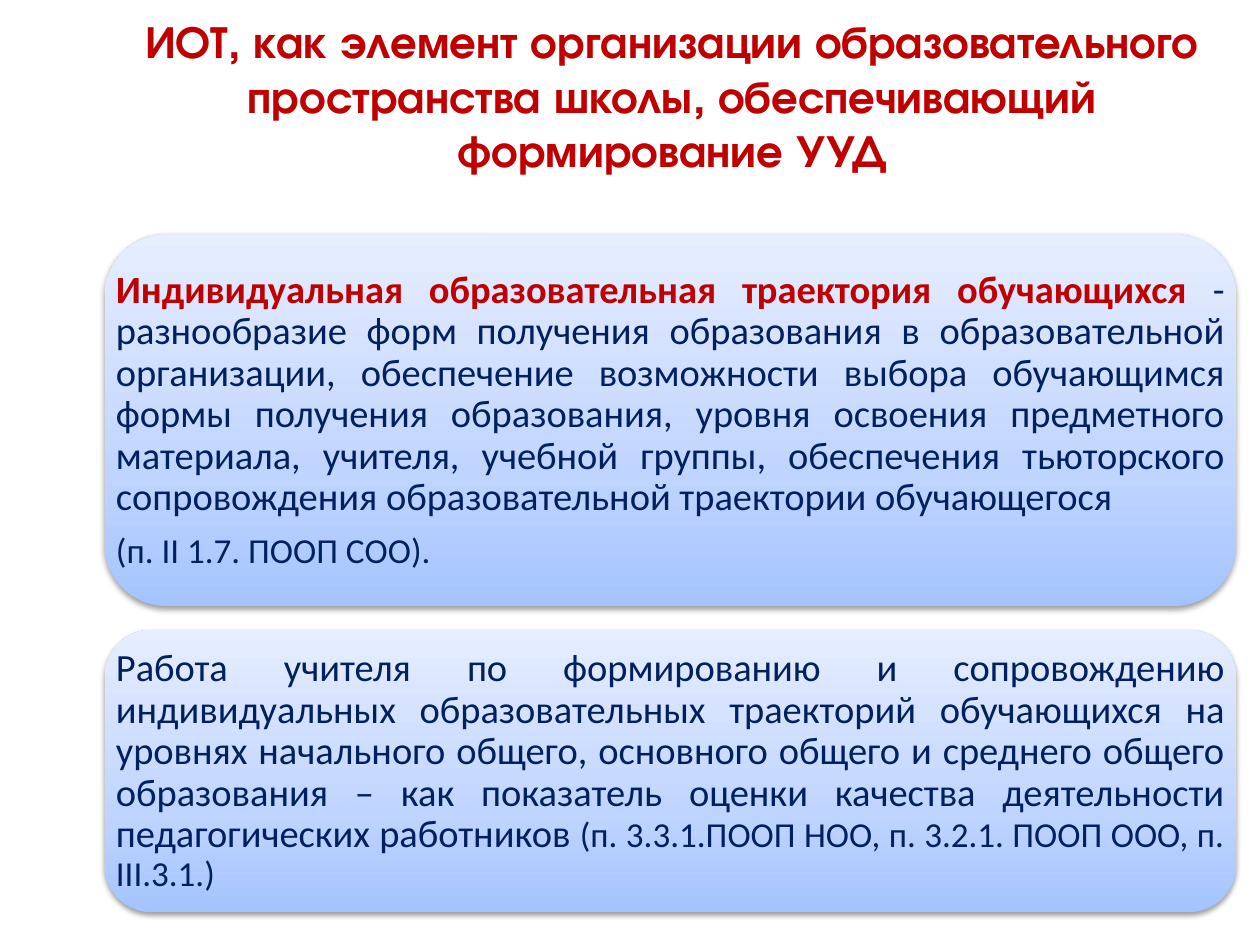
"""Builds a slide on individual educational trajectories with two text panels."""
from lxml.etree import SubElement
from pptx import Presentation
from pptx.dml.color import RGBColor
from pptx.enum.shapes import MSO_SHAPE
from pptx.enum.text import MSO_ANCHOR, MSO_AUTO_SIZE, PP_ALIGN
from pptx.oxml import parse_xml
from pptx.oxml.ns import nsdecls, qn
from pptx.util import Inches, Pt

RED, NAVY = "C00000", "002060"
GRADIENT = [(0, "A4C4FF"), (35, "BFD4FF"), (100, "E6EEFF")]
LEFT, WIDTH = Inches(0.83), Inches(8.98)
PANELS = [
    (1.86, 2.95, [
        [("Индивидуальная образовательная траектория обучающихся ", 22, RED, True),
         ("- разнообразие форм получения образования в образовательной организации, "
          "обеспечение возможности выбора обучающимся формы получения образования, "
          "уровня освоения предметного материала, учителя, учебной группы, обеспечения "
          "тьюторского сопровождения образовательной траектории обучающегося", 22, NAVY, False)],
        [("(п. II 1.7. ПООП СОО).", 20, NAVY, False)],
    ]),
    (5, 2.24, [
        [("Работа учителя по формированию и сопровождению индивидуальных образовательных "
          "траекторий обучающихся на уровнях начального общего, основного общего и среднего "
          "общего образования – как показатель оценки качества деятельности педагогических "
          "работников ", 22, NAVY, False),
         ("(п. 3.3.1.ПООП НОО, п. 3.2.1. ПООП ООО, п. III.3.1.)", 20, NAVY, False)],
    ]),
]


def style_font(font, name, size, color, bold):
    font.name, font.size, font.bold = name, Pt(size), bold
    font.color.rgb = RGBColor.from_string(color)


def style_panel(panel):
    panel.shadow.inherit = False
    panel.line.fill.background()
    properties = panel._element.spPr
    stops = "".join(f'<a:gs pos="{share * 1000}"><a:srgbClr val="{color}"/></a:gs>'
                    for share, color in GRADIENT)
    properties.find(qn("a:prstGeom")).addnext(parse_xml(
        f'<a:gradFill {nsdecls("a")} rotWithShape="1"><a:gsLst>{stops}</a:gsLst>'
        '<a:lin ang="16200000" scaled="0"/></a:gradFill>'))
    shadow = SubElement(properties.find(qn("a:effectLst")), qn("a:outerShdw"),
                        blurRad=str(Pt(3.1)), dist=str(Pt(1.6)), dir="5400000", rotWithShape="0")
    shade = SubElement(shadow, qn("a:srgbClr"), val="000000")
    SubElement(shade, qn("a:alpha"), val="38000")


deck = Presentation()
deck.slide_width, deck.slide_height = Inches(10), Inches(7.5)
slide = deck.slides.add_slide(deck.slide_layouts[5])

title = slide.shapes.title
title.left, title.top, title.width, title.height = map(Inches, (0.67, 0.13, 9.33, 1.25))
heading = title.text_frame
heading.text = ("ИОТ, как элемент организации образовательного пространства школы, "
                "обеспечивающий формирование УУД")
heading.auto_size = MSO_AUTO_SIZE.NONE
heading.vertical_anchor = MSO_ANCHOR.MIDDLE
heading.paragraphs[0].alignment = PP_ALIGN.CENTER
style_font(heading.paragraphs[0].font, "TeX Gyre Adventor", 26, RED, True)

for top, height, paragraphs in PANELS:
    area = LEFT, Inches(top), WIDTH, Inches(height)
    style_panel(slide.shapes.add_shape(MSO_SHAPE.ROUNDED_RECTANGLE, *area))
    body = slide.shapes.add_textbox(*area).text_frame
    body.word_wrap = True
    body.vertical_anchor = MSO_ANCHOR.MIDDLE
    body.margin_left = body.margin_right = body.margin_top = body.margin_bottom = Inches(0.09)
    for index, runs in enumerate(paragraphs):
        paragraph = body.add_paragraph() if index else body.paragraphs[0]
        paragraph.alignment = PP_ALIGN.JUSTIFY
        paragraph.line_spacing = 0.9
        paragraph.space_after = Pt(7.7)
        for text, size, color, bold in runs:
            run = paragraph.add_run()
            run.text = text
            style_font(run.font, "Calibri", size, color, bold)

deck.save("out.pptx")
